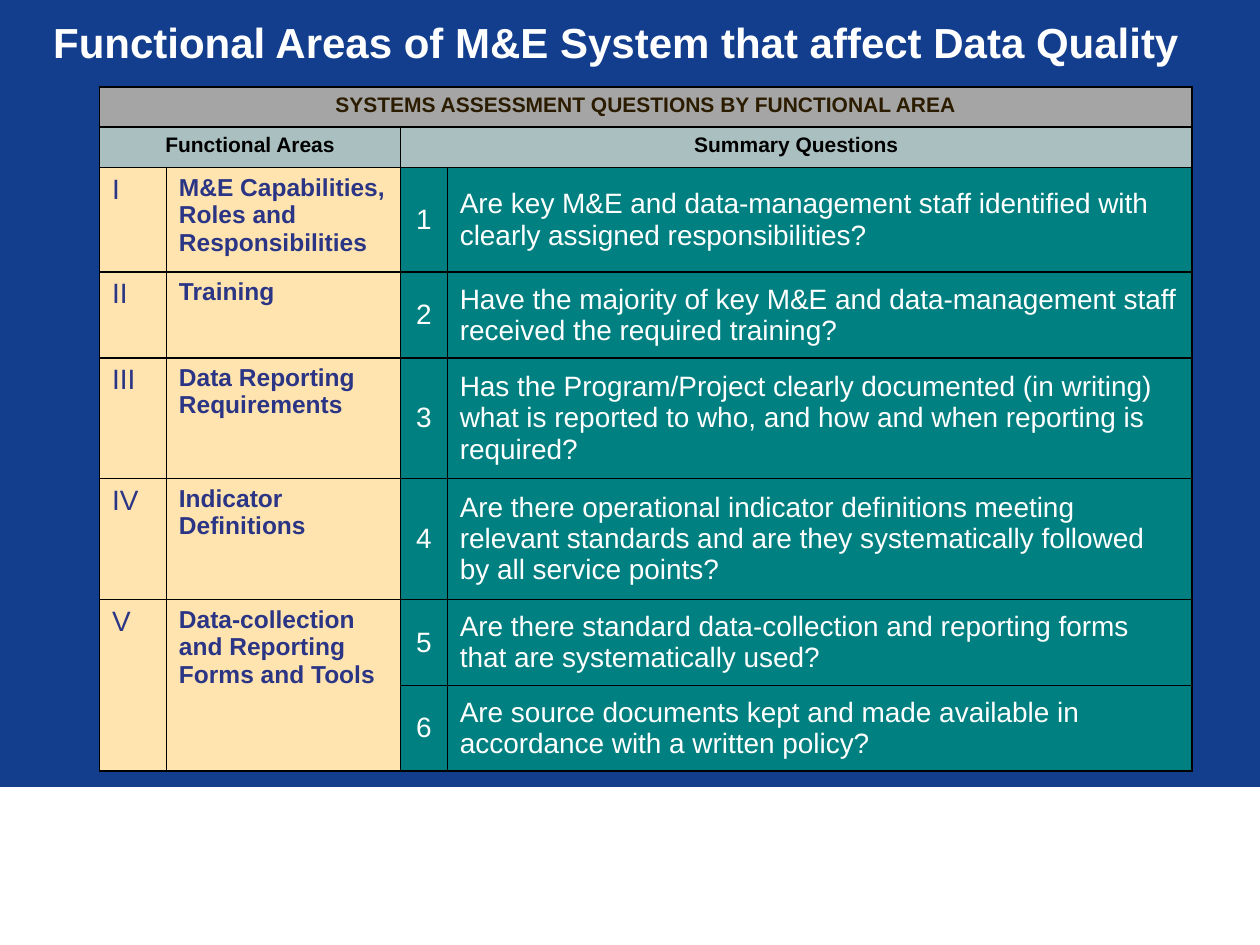
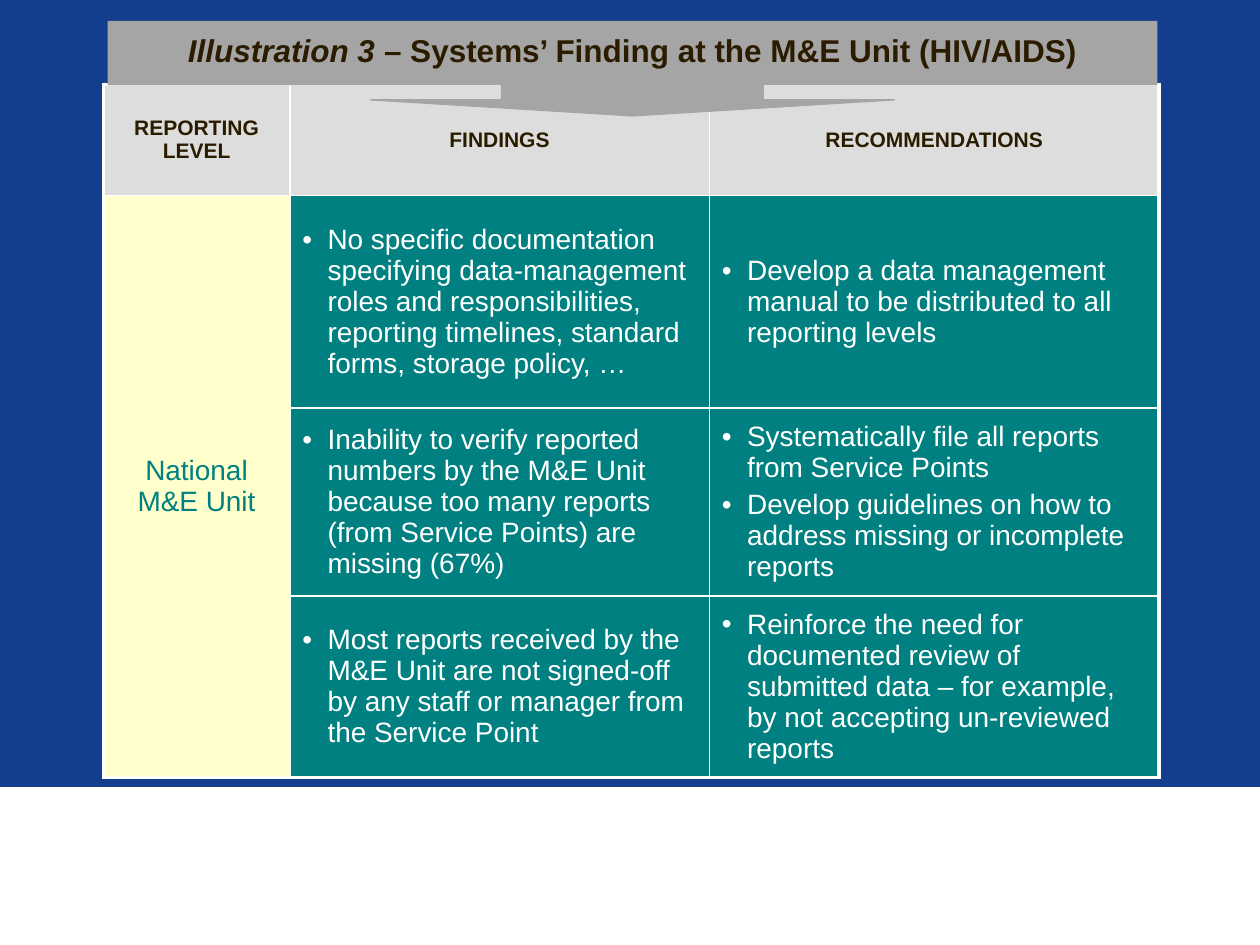
from dataclasses import dataclass

from lxml import etree
from pptx import Presentation
from pptx.dml.color import RGBColor
from pptx.enum.shapes import MSO_SHAPE
from pptx.enum.text import MSO_ANCHOR, PP_ALIGN
from pptx.oxml.ns import qn
from pptx.util import Inches, Pt

LEFT, CENTER = PP_ALIGN.LEFT, PP_ALIGN.CENTER
TOP, MIDDLE = MSO_ANCHOR.TOP, MSO_ANCHOR.MIDDLE
RECTANGLE, CALLOUT = MSO_SHAPE.RECTANGLE, MSO_SHAPE.DOWN_ARROW_CALLOUT

FONT = "Arial"
COLORS = {
    "navy": "133D8D", "white": "FFFFFF", "black": "000000", "brown": "2B1C00",
    "gray": "A5A5A5", "light_gray": "DDDDDD", "sage": "AAC0C0",
    "peach": "FFE4AF", "indigo": "2B3585", "teal": "008080", "cream": "FFFFCC",
}


@dataclass
class CellStyle:
    fill: str
    color: str
    size: int = 16
    bold: bool = False
    align: int = LEFT
    anchor: int = MIDDLE
    bullet: bool = False


BANNER = CellStyle("gray", "brown", 12, True, CENTER, TOP)
COLUMN_HEAD = CellStyle("sage", "black", 12, True, CENTER, TOP)
NUMERAL = CellStyle("peach", "indigo", anchor=TOP)
AREA = CellStyle("peach", "indigo", 14, True, anchor=TOP)
NUMBER = CellStyle("teal", "white", align=CENTER)
QUESTION = CellStyle("teal", "white")
FINDINGS_HEAD = CellStyle("light_gray", "brown", 12, True, CENTER)
LEVEL = CellStyle("cream", "teal", align=CENTER)
FINDING = CellStyle("teal", "white", bullet=True)

AREAS = [
    ("I", "M&E Capabilities, Roles and Responsibilities",
     ["Are key M&E and data-management staff identified with clearly assigned responsibilities?"]),
    ("II", "Training",
     ["Have the majority of key M&E and data-management staff received the required training?"]),
    ("III", "Data Reporting Requirements",
     ["Has the Program/Project clearly documented (in writing) what is reported to who, "
      "and how and when reporting is required?"]),
    ("IV", "Indicator Definitions",
     ["Are there operational indicator definitions meeting relevant standards "
      "and are they systematically followed by all service points?"]),
    ("V", "Data-collection and Reporting Forms and Tools",
     ["Are there standard data-collection and reporting forms that are systematically used?",
      "Are source documents kept and made available in accordance with a written policy?"]),
]

FINDINGS = [
    (["No specific documentation specifying data-management roles and responsibilities, "
      "reporting timelines, standard forms, storage policy, …"],
     ["Develop a data management manual to be distributed to all reporting levels"]),
    (["Inability to verify reported numbers by the M&E Unit because too many reports "
      "(from Service Points) are missing (67%)"],
     ["Systematically file all reports from Service Points",
      "Develop guidelines on how to address missing or incomplete reports"]),
    (["Most reports received by the M&E Unit are not signed-off by any staff or manager "
      "from the Service Point"],
     ["Reinforce the need for documented review of submitted data – for example, "
      "by not accepting un-reviewed reports"]),
]


def rgb(name):
    return RGBColor.from_string(COLORS[name])


def add_span(para, text, size, color, bold=False, italic=False):
    span = para.add_run()
    span.text = text
    span.font.name = FONT
    span.font.size = Pt(size)
    span.font.bold = bold
    span.font.italic = italic
    span.font.color.rgb = rgb(color)


def add_panel(page, kind, box, color):
    panel = page.shapes.add_shape(kind, *map(Inches, box))
    panel.shadow.inherit = False
    panel.fill.solid()
    panel.fill.fore_color.rgb = rgb(color)
    panel.line.color.rgb = rgb(color)
    panel.line.width = Pt(0.75)
    return panel


def add_page(deck):
    page = deck.slides.add_slide(deck.slide_layouts[6])
    add_panel(page, RECTANGLE, (0, 6.25, 10, 1.25), "white")
    return page


def add_bullet(para):
    properties = para._p.get_or_add_pPr()
    properties.set("marL", str(Inches(0.2)))
    properties.set("indent", str(-Inches(0.2)))
    etree.SubElement(properties, qn("a:buFont"), typeface=FONT)
    etree.SubElement(properties, qn("a:buChar"), char="•")


def fill_cell(cell, style, *texts):
    cell.fill.solid()
    cell.fill.fore_color.rgb = rgb(style.fill)
    cell.vertical_anchor = style.anchor
    frame = cell.text_frame
    for index, text in enumerate(texts):
        para = frame.add_paragraph() if index else frame.paragraphs[0]
        para.alignment = style.align
        if index:
            para.space_before = Pt(style.size * 0.2)
        if style.bullet:
            add_bullet(para)
        add_span(para, text, style.size, style.color, style.bold)


def add_grid(page, left, top, widths, heights):
    shape = page.shapes.add_table(
        len(heights), len(widths), Inches(left), Inches(top),
        Inches(sum(widths)), Inches(sum(heights)))
    grid = shape.table
    grid.first_row = grid.horz_banding = False
    for column, width in zip(grid.columns, widths):
        column.width = Inches(width)
    for row, height in zip(grid.rows, heights):
        row.height = Inches(height)
    return grid


def merge(grid, first, last):
    grid.cell(*first).merge(grid.cell(*last))


def draw_borders(grid, color, inner=1, outer=1):
    rows, columns = len(grid.rows), len(grid.columns)
    for row in range(rows):
        for column in range(columns):
            cell = grid.cell(row, column)
            if cell.is_spanned:
                continue
            on_edge = {
                "L": column == 0,
                "R": column + cell.span_width == columns,
                "T": row == 0,
                "B": row + cell.span_height == rows,
            }
            properties = cell._tc.get_or_add_tcPr()
            for position, (side, edge) in enumerate(on_edge.items()):
                line = etree.Element(qn(f"a:ln{side}"), w=str(Pt(outer if edge else inner)))
                fill = etree.SubElement(line, qn("a:solidFill"))
                etree.SubElement(fill, qn("a:srgbClr"), val=COLORS[color])
                properties.insert(position, line)


def add_title(page, text, left, top, width, height):
    box = page.shapes.add_textbox(*map(Inches, (left, top, width, height)))
    frame = box.text_frame
    frame.word_wrap = True
    frame.margin_right = Inches(0.29)
    para = frame.paragraphs[0]
    para.alignment = CENTER
    add_span(para, text, 24, "white", True)


def add_areas_table(page, left, top):
    grid = add_grid(page, left, top, [0.53, 1.86, 0.37, 5.91],
                    [0.32, 0.32, 0.83, 0.68, 0.96, 0.96, 0.68, 0.68])
    merge(grid, (0, 0), (0, 3))
    merge(grid, (1, 0), (1, 1))
    merge(grid, (1, 2), (1, 3))
    fill_cell(grid.cell(0, 0), BANNER, "SYSTEMS ASSESSMENT QUESTIONS BY FUNCTIONAL AREA")
    fill_cell(grid.cell(1, 0), COLUMN_HEAD, "Functional Areas")
    fill_cell(grid.cell(1, 2), COLUMN_HEAD, "Summary Questions")
    number = 1
    for numeral, area, questions in AREAS:
        first = number + 1
        if len(questions) > 1:
            for column in range(2):
                merge(grid, (first, column), (first + len(questions) - 1, column))
        fill_cell(grid.cell(first, 0), NUMERAL, numeral)
        fill_cell(grid.cell(first, 1), AREA, area)
        for question in questions:
            fill_cell(grid.cell(number + 1, 2), NUMBER, str(number))
            fill_cell(grid.cell(number + 1, 3), QUESTION, question)
            number += 1
    draw_borders(grid, "black")


def add_findings_table(page, left, top):
    grid = add_grid(page, left, top, [1.48, 3.33, 3.57], [0.88, 1.69, 1.49, 1.44])
    for column, head in enumerate(["REPORTING LEVEL", "FINDINGS", "RECOMMENDATIONS"]):
        fill_cell(grid.cell(0, column), FINDINGS_HEAD, head)
    merge(grid, (1, 0), (len(FINDINGS), 0))
    fill_cell(grid.cell(1, 0), LEVEL, "National M&E Unit")
    for row, entry in enumerate(FINDINGS, 1):
        for column, texts in enumerate(entry, 1):
            fill_cell(grid.cell(row, column), FINDING, *texts)
    draw_borders(grid, "white", outer=2.25)


def add_heading_callout(page, *box):
    callout = add_panel(page, CALLOUT, box, "gray")
    for index, value in enumerate([2.77, 2.77, 0.17, 0.67]):
        callout.adjustments[index] = value
    frame = callout.text_frame
    frame.word_wrap = True
    frame.vertical_anchor = MIDDLE
    para = frame.paragraphs[0]
    para.alignment = CENTER
    para.line_spacing = 0.8
    add_span(para, "Illustration 3 ", 18, "brown", True, True)
    add_span(para, "– Systems’ Finding at the M&E Unit (HIV/AIDS)", 18, "brown", True)


def build_areas_page(deck):
    page = add_page(deck)
    add_areas_table(page, 0.79, 0.69)
    add_title(page, "Functional Areas of M&E System that affect Data Quality",
              0.25, 0.08, 9.47, 0.5)


def build_findings_page(deck):
    page = add_page(deck)
    add_findings_table(page, 0.82, 0.67)
    add_heading_callout(page, 0.86, 0.17, 8.32, 0.75)


def main():
    deck = Presentation()
    deck.slide_width, deck.slide_height = Inches(10), Inches(7.5)
    background = deck.slide_master.background.fill
    background.solid()
    background.fore_color.rgb = rgb("navy")
    build_areas_page(deck)
    build_findings_page(deck)
    deck.save("out.pptx")


if __name__ == "__main__":
    main()
